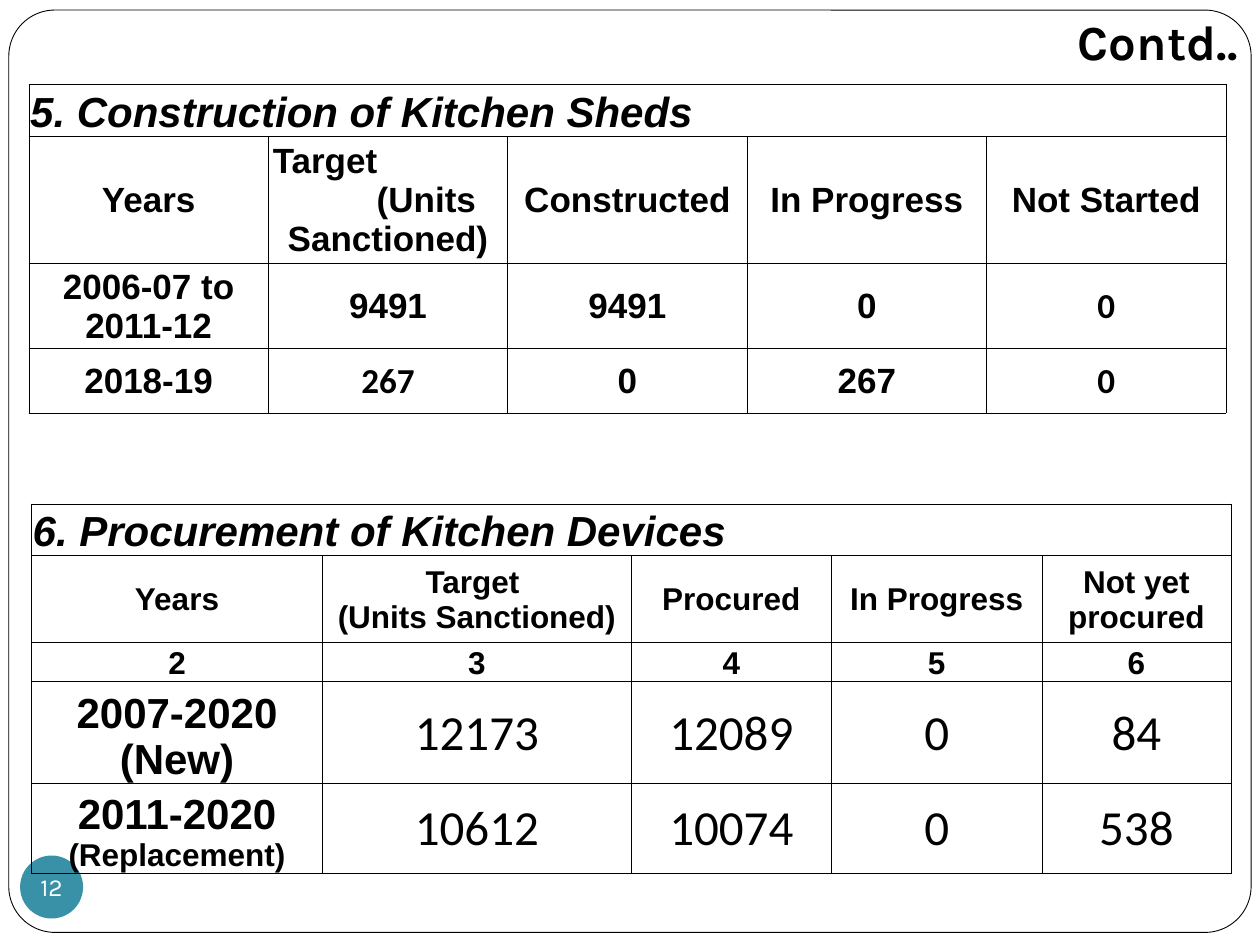
from dataclasses import dataclass, field
from typing import Any

import lxml.etree
import pptx
import pptx.dml.color
import pptx.enum.shapes
import pptx.enum.text
import pptx.oxml.ns
import pptx.util

COLORS = {"ink": "000000", "paper": "FFFFFF", "badge": "3891A7"}
GRID_COLUMNS, GRID_ROWS = 100, 75
ALIGN = pptx.enum.text.PP_ALIGN
ANCHOR = pptx.enum.text.MSO_ANCHOR
SHAPE = pptx.enum.shapes.MSO_SHAPE

presentation = pptx.Presentation()
presentation.slide_width = pptx.util.Inches(10)
presentation.slide_height = pptx.util.Inches(7.5)


@dataclass(frozen=True)
class Box:
    column: float
    row: float
    columns: float
    rows: float


@dataclass(frozen=True)
class Line:
    text: str
    size: float
    font: str = "Arial"
    bold: bool = True
    italic: bool = False
    color: str = "ink"
    align: Any = ALIGN.CENTER
    indent: float = 0


@dataclass(frozen=True)
class Cell:
    lines: list[Line]
    anchor: Any = ANCHOR.MIDDLE


@dataclass(frozen=True)
class Grid:
    box: Box
    title: str
    columns: list[float]
    rows: list[float]
    cells: list[list[Cell]] = field(default_factory=list)


def across(columns: float) -> int:
    return round(presentation.slide_width * columns / GRID_COLUMNS)


def down(rows: float) -> int:
    return round(presentation.slide_height * rows / GRID_ROWS)


def place(box: Box) -> tuple[int, int, int, int]:
    return across(box.column), down(box.row), across(box.columns), down(box.rows)


def rgb(name: str) -> pptx.dml.color.RGBColor:
    return pptx.dml.color.RGBColor.from_string(COLORS[name])


def apply(target: Any, values: dict[str, Any]) -> None:
    for name, value in values.items():
        setattr(target, name, value)


def margins(left: float, top: float, right: float, bottom: float) -> dict[str, int]:
    sides = {"left": left, "top": top, "right": right, "bottom": bottom}
    return {f"margin_{side}": pptx.util.Inches(size) for side, size in sides.items()}


def write(frame: Any, lines: list[Line]) -> None:
    for index, line in enumerate(lines):
        paragraph = frame.add_paragraph() if index else frame.paragraphs[0]
        paragraph.alignment = line.align
        if line.indent:
            paragraph._p.get_or_add_pPr().set("marL", str(across(line.indent)))
        run = paragraph.add_run()
        run.text = line.text
        apply(run.font, {"name": line.font, "size": pptx.util.Pt(line.size),
                         "bold": line.bold, "italic": line.italic})
        run.font.color.rgb = rgb(line.color)


def draw_shape(slide: Any, kind: Any, box: Box, fill: str, outline: str = "") -> Any:
    shape = slide.shapes.add_shape(kind, *place(box))
    shape.shadow.inherit = False
    shape.fill.solid()
    shape.fill.fore_color.rgb = rgb(fill)
    if outline:
        shape.line.color.rgb = rgb(outline)
        shape.line.width = pptx.util.Pt(0.5)
    else:
        shape.line.fill.background()
    return shape


def border(cell: Any) -> None:
    properties = cell._tc.get_or_add_tcPr()
    qualified = pptx.oxml.ns.qn
    for position, side in enumerate(("lnL", "lnR", "lnT", "lnB")):
        edge = lxml.etree.Element(qualified(f"a:{side}"), w=str(pptx.util.Pt(0.5)))
        solid = lxml.etree.SubElement(edge, qualified("a:solidFill"))
        lxml.etree.SubElement(solid, qualified("a:srgbClr"), val=COLORS["ink"])
        properties.insert(position, edge)


def draw_grid(slide: Any, grid: Grid) -> None:
    frame = slide.shapes.add_table(len(grid.rows), len(grid.columns), *place(grid.box))
    table = frame.table
    apply(table, {"first_row": False, "horz_banding": False})
    for column, width in zip(table.columns, grid.columns):
        column.width = across(width)
    for row, height in zip(table.rows, grid.rows):
        row.height = down(height)
    frame.height = down(grid.box.rows)
    for cell in table.iter_cells():
        cell.fill.background()
        border(cell)
        apply(cell, margins(0.01, 0.01, 0.01, 0))
    heading = table.cell(0, 0)
    heading.merge(table.cell(0, len(grid.columns) - 1))
    heading.vertical_anchor = ANCHOR.BOTTOM
    write(heading.text_frame, [Line(grid.title, 24, italic=True, align=ALIGN.LEFT)])
    for row_index, row_cells in enumerate(grid.cells, start=1):
        for column_index, content in enumerate(row_cells):
            cell = table.cell(row_index, column_index)
            cell.vertical_anchor = content.anchor
            write(cell.text_frame, content.lines)


def cells(texts: list[str], size: float, anchor: Any = ANCHOR.MIDDLE, **style: Any) -> list[Cell]:
    return [Cell([Line(part, size, **style) for part in text.split("\n")], anchor)
            for text in texts]


def period(years: str, kind: str, kind_size: float) -> Cell:
    return Cell([Line(years, 24), Line(kind, kind_size)], ANCHOR.BOTTOM)


def amounts(texts: list[str]) -> list[Cell]:
    return cells(texts, 28, font="Calibri", bold=False)


TARGET = Cell([Line("Target", 20, align=ALIGN.LEFT, indent=0.25),
               Line("(Units", 20, align=ALIGN.LEFT, indent=8.5),
               Line("Sanctioned)", 20)])

DEVICES = Grid(
    Box(2.5, 40, 95.3, 29.3), "6. Procurement of Kitchen Devices",
    [23.1, 24.5, 15.9, 16.7, 15], [2.2, 6.9, 2.2, 2.2, 2.2],
    [cells(["Years", "Target \n(Units Sanctioned)", "Procured", "In Progress",
            "Not yet procured"], 18),
     cells(["2", "3", "4", "5", "6"], 18, ANCHOR.BOTTOM),
     [period("2007-2020", "(New)", 24), *amounts(["12173", "12089", "0", "84"])],
     [period("2011-2020", "(Replacement)", 18), *amounts(["10612", "10074", "0", "538"])]])

SHEDS = Grid(
    Box(2.3, 6.7, 95, 26.1), "5. Construction of Kitchen Sheds",
    [19] * 5, [3.3, 7.4, 5.7, 5.1],
    [[*cells(["Years"], 20), TARGET,
      *cells(["Constructed", "In Progress", "Not Started"], 20)],
     [*cells(["2006-07 to 2011-12", "9491", "9491", "0"], 20),
      *cells(["0"], 20, font="Calibri")],
     [*cells(["2018-19"], 20), *cells(["267"], 20, font="Calibri"),
      *cells(["0", "267"], 20), *cells(["0"], 20, font="Calibri")]])


def main() -> None:
    slide = presentation.slides.add_slide(presentation.slide_layouts[6])
    panel = draw_shape(slide, SHAPE.ROUNDED_RECTANGLE, Box(0.7, 0.8, 98.6, 73.2),
                       "paper", "ink")
    panel.adjustments[0] = 0.05

    badge = draw_shape(slide, SHAPE.OVAL, Box(1.6, 67.9, 5, 5), "badge")
    apply(badge.text_frame, {"word_wrap": False, "vertical_anchor": ANCHOR.MIDDLE,
                             **margins(0, 0, 0, 0)})
    write(badge.text_frame, [Line("12", 14, "Karla", bold=False, color="paper")])

    title = slide.shapes.add_textbox(*place(Box(14.2, 0.8, 85, 5.8)))
    apply(title.text_frame, {"word_wrap": True, "vertical_anchor": ANCHOR.BOTTOM,
                             **margins(0.1, 0.05, 0.1, 0.1)})
    write(title.text_frame, [Line("Contd..", 28, "Karla", align=ALIGN.RIGHT)])

    for grid in (DEVICES, SHEDS):
        draw_grid(slide, grid)
    presentation.save("out.pptx")


if __name__ == "__main__":
    main()
